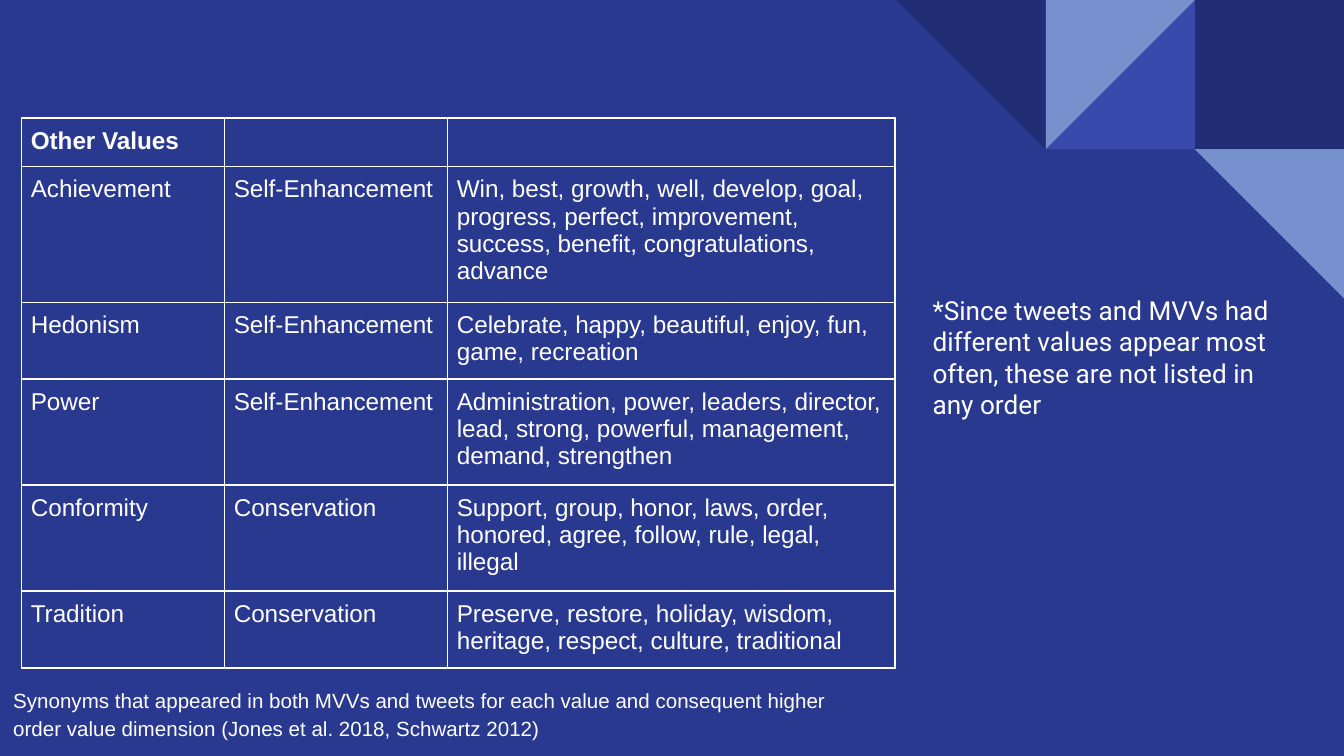
"""Build a slide listing other values, their dimensions and their synonyms."""
import pptx
import pptx.dml.color
import pptx.enum.shapes
import pptx.enum.text
import pptx.oxml
import pptx.oxml.ns
import pptx.util
from lxml import etree

Inches = pptx.util.Inches
SHAPES = pptx.enum.shapes.MSO_SHAPE

THEME = {
    "background": "2A3990", "navy": "212D74", "indigo": "3949AB",
    "sky": "7890CD", "white": "FFFFFF",
    "body_font": "Arial", "note_font": "Roboto",
    "table_size": 13, "caption_size": 11, "note_size": 14,
}

ROWS = [
    ("Other Values", "", ""),
    ("Achievement", "Self-Enhancement",
     "Win, best, growth, well, develop, goal, progress, perfect, improvement, "
     "success, benefit, congratulations, advance"),
    ("Hedonism", "Self-Enhancement",
     "Celebrate, happy, beautiful, enjoy, fun, game, recreation"),
    ("Power", "Self-Enhancement",
     "Administration, power, leaders, director, lead, strong, powerful, "
     "management, demand, strengthen"),
    ("Conformity", "Conservation",
     "Support, group, honor, laws, order, honored, agree, follow, rule, legal, illegal"),
    ("Tradition", "Conservation",
     "Preserve, restore, holiday, wisdom, heritage, respect, culture, traditional"),
]
COLUMN_WIDTHS = (1.51, 1.66, 3.33)
ROW_HEIGHTS = (0.35, 1.01, 0.57, 0.79, 0.79, 0.57)
TABLE_LEFT, TABLE_TOP = 0.16, 0.88
CELL_MARGIN = 0.07

CAPTION = ("Synonyms that appeared in both MVVs and tweets for each value and "
           "consequent higher order value dimension (Jones et al. 2018, Schwartz 2012)")
NOTE = ("*Since tweets and MVVs had different values appear most often, "
        "these are not listed in any order")

SLIDE_WIDTH = 10
SLIDE_HEIGHT = SLIDE_WIDTH * 9 / 16
TILE = 1.11
TILES = [
    (2, 0, SHAPES.RECTANGLE, 0, "navy"),
    (1, 0, SHAPES.RIGHT_TRIANGLE, 270, "indigo"),
    (1, 0, SHAPES.RIGHT_TRIANGLE, 90, "sky"),
    (0, 0, SHAPES.RIGHT_TRIANGLE, 180, "navy"),
    (2, 1, SHAPES.RIGHT_TRIANGLE, 180, "sky"),
]


def color(name):
    return pptx.dml.color.RGBColor.from_string(THEME[name])


def style_run(span, size, font, bold=False):
    span.font.size = pptx.util.Pt(THEME[size])
    span.font.name = THEME[font]
    span.font.color.rgb = color("white")
    span.font.bold = bold


def add_tile(slide, column, row, kind, rotation, fill):
    left = SLIDE_WIDTH - (3 - column) * TILE
    tile = slide.shapes.add_shape(
        kind, Inches(left), Inches(row * TILE), Inches(TILE), Inches(TILE))
    tile.rotation = rotation
    tile.shadow.inherit = False
    tile.fill.solid()
    tile.fill.fore_color.rgb = color(fill)
    tile.line.fill.background()


def add_text(slide, text, bounds, size, font, spacing):
    box = slide.shapes.add_textbox(*map(Inches, bounds))
    frame = box.text_frame
    frame.word_wrap = True
    frame.auto_size = pptx.enum.text.MSO_AUTO_SIZE.SHAPE_TO_FIT_TEXT
    frame.margin_left = frame.margin_right = Inches(0.1)
    frame.margin_top = frame.margin_bottom = Inches(0.1)
    frame.text = text
    para = frame.paragraphs[0]
    para.line_spacing = spacing
    style_run(para.runs[0], size, font)


def add_borders(cell):
    namespace = pptx.oxml.ns.nsdecls("a")
    properties = cell._tc.get_or_add_tcPr()
    for position, side in enumerate(("lnL", "lnR", "lnT", "lnB")):
        properties.insert(position, pptx.oxml.parse_xml(
            f'<a:{side} {namespace} w="12700"><a:solidFill>'
            f'<a:srgbClr val="{THEME["white"]}"/></a:solidFill></a:{side}>'))


def fill_cell(cell, text, bold):
    cell.margin_left = cell.margin_right = Inches(CELL_MARGIN)
    cell.margin_top = cell.margin_bottom = Inches(CELL_MARGIN)
    cell.fill.background()
    add_borders(cell)
    cell.text_frame.text = text
    para = cell.text_frame.paragraphs[0]
    for span in para.runs:
        style_run(span, "table_size", "body_font", bold)
    if not text:
        etree.SubElement(para._p, pptx.oxml.ns.qn("a:endParaRPr"),
                         sz=str(THEME["table_size"] * 100))


def add_values_table(slide):
    frame = slide.shapes.add_table(
        len(ROWS), len(COLUMN_WIDTHS), Inches(TABLE_LEFT), Inches(TABLE_TOP),
        Inches(sum(COLUMN_WIDTHS)), Inches(sum(ROW_HEIGHTS)))
    table = frame.table
    table.horz_banding = False
    for column, width in zip(table.columns, COLUMN_WIDTHS):
        column.width = Inches(width)
    for index, (row, height, texts) in enumerate(zip(table.rows, ROW_HEIGHTS, ROWS)):
        row.height = Inches(height)
        for cell, text in zip(row.cells, texts):
            fill_cell(cell, text, bold=index == 0)


def main():
    deck = pptx.Presentation()
    deck.slide_width, deck.slide_height = Inches(SLIDE_WIDTH), Inches(SLIDE_HEIGHT)
    slide = deck.slides.add_slide(deck.slide_layouts[6])
    slide.background.fill.solid()
    slide.background.fill.fore_color.rgb = color("background")
    for tile in TILES:
        add_tile(slide, *tile)
    add_values_table(slide)
    add_text(slide, CAPTION, (0, 4.99, 6.5, 0.6), "caption_size", "body_font", 1.15)
    add_text(slide, NOTE, (6.84, 2.09, 2.72, 1.14), "note_size", "note_font", 1.0)
    deck.save("out.pptx")


if __name__ == "__main__":
    main()
